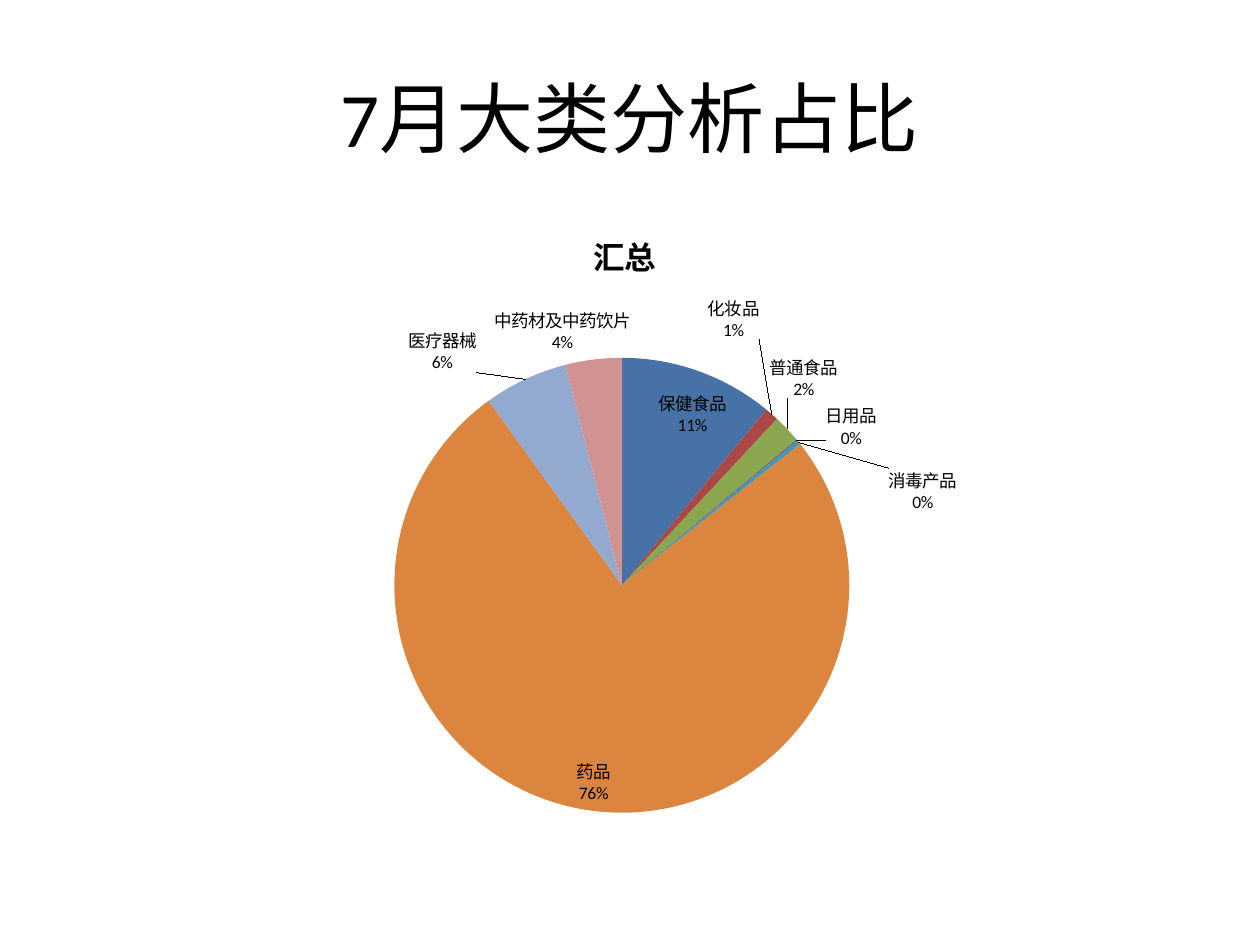
from lxml import etree
from pptx import Presentation
from pptx.chart.data import CategoryChartData
from pptx.dml.color import RGBColor
from pptx.enum import chart as ec, text as et
from pptx.oxml.ns import qn
from pptx.util import Inches, Pt

TITLE = "7月大类分析占比"
SERIES = "汇总"
FONT = "Calibri"
BLACK = "000000"
INSIDE = ec.XL_LABEL_POSITION.INSIDE_END
OUTSIDE = ec.XL_LABEL_POSITION.OUTSIDE_END
SLICES = [
    ("保健食品", 11, "4672A8", INSIDE, (0.04, 0.02)),
    ("化妆品", 1, "AB4744", OUTSIDE, (-0.09, -0.11)),
    ("普通食品", 2, "8AA64F", OUTSIDE, (-0.03, -0.04)),
    ("日用品", 0.1, "725990", OUTSIDE, (0.03, 0.02)),
    ("消毒产品", 0.3, "4299B0", OUTSIDE, (0.11, 0.12)),
    ("药品", 76, "DC853E", INSIDE, (-0.02, 0)),
    ("医疗器械", 6, "93A9CF", OUTSIDE, (-0.06, 0)),
    ("中药材及中药饮片", 4, "D19392", OUTSIDE, (0.05, 0)),
]
LEFT, TOP, WIDTH, HEIGHT = 1.93, 1.62, 6.06, 4.96
PIE_LEFT, PIE_TOP, PIE_SIZE = 3.13, 2.84, 3.61


def style(font, size, bold=False):
    font.name = FONT
    font.size = Pt(size)
    font.bold = bold
    font.color.rgb = RGBColor.from_string(BLACK)


def make_layout(**settings):
    layout = etree.Element(qn("c:layout"))
    manual = etree.SubElement(layout, qn("c:manualLayout"))
    for tag, val in settings.items():
        etree.SubElement(manual, qn("c:" + tag)).set("val", str(val))
    return layout


def show_category_and_percent(labels):
    for tag in ("showVal", "showCatName", "showPercent"):
        labels.find(qn("c:" + tag)).set("val", "0" if tag == "showVal" else "1")
    sep = etree.Element(qn("c:separator"))
    sep.text = "\n"
    anchor = labels.find(qn("c:showBubbleSize"))
    if anchor is None:
        anchor = labels.find(qn("c:showPercent"))
    anchor.addnext(sep)


prs = Presentation()
prs.slide_width, prs.slide_height = Inches(10), Inches(7.5)
s = prs.slides.add_slide(prs.slide_layouts[5])

title = s.shapes.title
title.left, title.top = Inches(0.5), Inches(0.3)
title.width, title.height = Inches(9), Inches(1.25)
tf = title.text_frame
tf.text = TITLE
tf.vertical_anchor = et.MSO_ANCHOR.MIDDLE
p = tf.paragraphs[0]
p.alignment = et.PP_ALIGN.CENTER
style(p.runs[0].font, 44)

data = CategoryChartData()
data.categories = [row[0] for row in SLICES]
data.add_series(SERIES, [row[1] for row in SLICES])
chart = s.shapes.add_chart(
    ec.XL_CHART_TYPE.PIE, Inches(LEFT), Inches(TOP), Inches(WIDTH), Inches(HEIGHT), data
).chart
style(chart.font, 10)
chart.has_legend = False
chart.has_title = True
chart.chart_title.text_frame.text = SERIES
style(chart.chart_title.text_frame.paragraphs[0].runs[0].font, 18, True)

plot = chart.plots[0]
plot.vary_by_categories = True
pie = plot.series[0]
style(pie.data_labels.font, 10)
for i, (name, value, color, position, offset) in enumerate(SLICES):
    point = pie.points[i]
    point.format.fill.solid()
    point.format.fill.fore_color.rgb = RGBColor.from_string(color)
    style(point.data_label.font, 10)
    point.data_label.position = position

labels = pie.data_labels._element
show_category_and_percent(labels)
for (*_, (dx, dy)), label in zip(SLICES, labels.findall(qn("c:dLbl"))):
    show_category_and_percent(label)
    label.insert(1, make_layout(x=dx, y=dy))
leader = labels.find(qn("c:showLeaderLines"))
if leader is None:
    leader = etree.SubElement(labels, qn("c:showLeaderLines"))
leader.set("val", "1")

area = chart._chartSpace.chart.plotArea
for old in area.findall(qn("c:layout")):
    area.remove(old)
area.insert(0, make_layout(
    layoutTarget="inner", xMode="edge", yMode="edge",
    x=round((PIE_LEFT - LEFT) / WIDTH, 3), y=round((PIE_TOP - TOP) / HEIGHT, 3),
    w=round(PIE_SIZE / WIDTH, 3), h=round(PIE_SIZE / HEIGHT, 3)))

prs.save("out.pptx")
